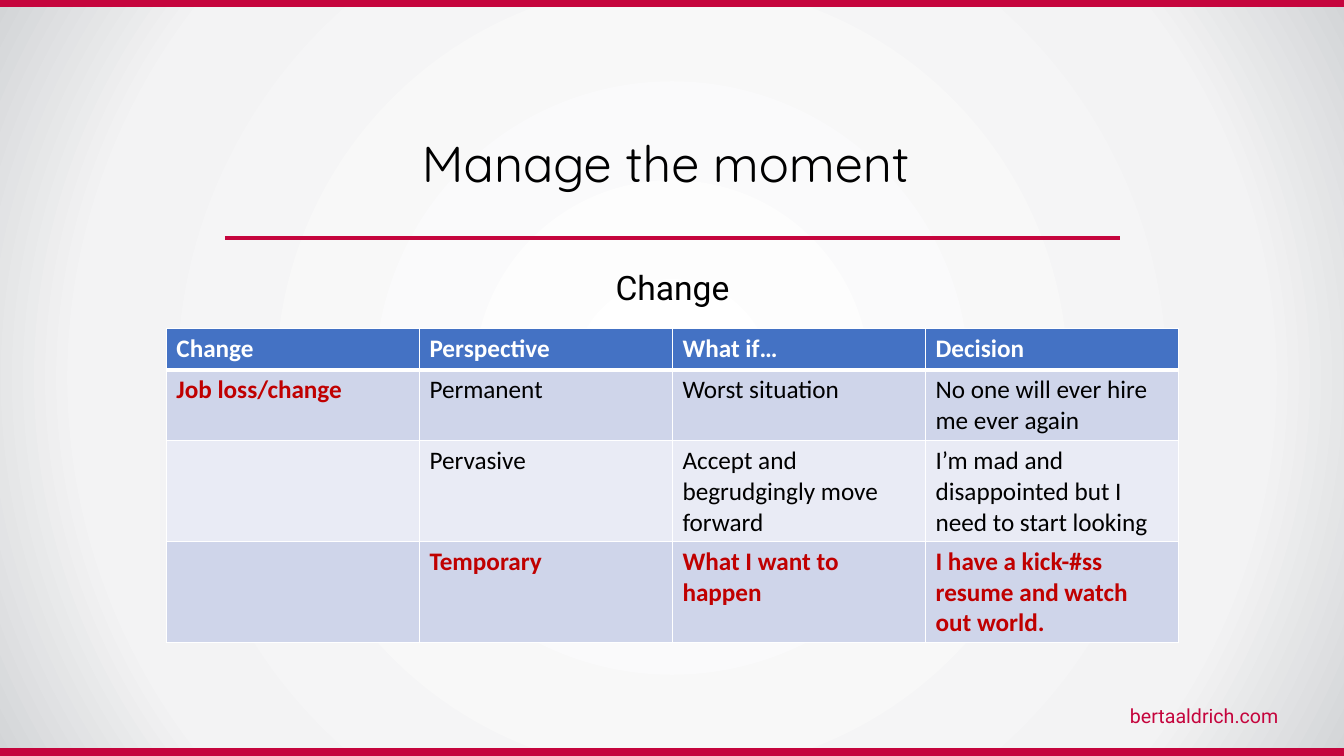
"""Build the "Manage the moment" slide with its table of perspectives on change."""
from typing import NamedTuple

from lxml import etree
from pptx import Presentation
from pptx.dml.color import RGBColor
from pptx.enum.shapes import MSO_CONNECTOR, MSO_SHAPE
from pptx.enum.text import MSO_ANCHOR, MSO_AUTO_SIZE, PP_ALIGN
from pptx.oxml import parse_xml
from pptx.oxml.ns import nsdecls, qn
from pptx.util import Inches, Pt

RECTANGLE = MSO_SHAPE.RECTANGLE
STRAIGHT = MSO_CONNECTOR.STRAIGHT
LEFT, CENTER, RIGHT = PP_ALIGN.LEFT, PP_ALIGN.CENTER, PP_ALIGN.RIGHT
TOP, MIDDLE = MSO_ANCHOR.TOP, MSO_ANCHOR.MIDDLE
NO_AUTOFIT = MSO_AUTO_SIZE.NONE

CRIMSON = RGBColor(0xC5, 0x05, 0x3D)
RED = RGBColor(0xC0, 0x00, 0x00)
BLACK = RGBColor(0x00, 0x00, 0x00)
WHITE = RGBColor(0xFF, 0xFF, 0xFF)
SILVER = RGBColor(0xF3, 0xF3, 0xF4)
GREY = RGBColor(0xD3, 0xD5, 0xD7)
BLUE = RGBColor(0x44, 0x72, 0xC4)
BAND_DARK = RGBColor(0xCF, 0xD5, 0xEA)
BAND_LIGHT = RGBColor(0xE9, 0xEB, 0xF5)


class Box(NamedTuple):
    left: float
    top: float
    width: float
    height: float


class Row(NamedTuple):
    height: float
    fill: RGBColor
    texts: tuple[str, ...]
    highlights: tuple[int, ...] = ()


TITLE_BOX = Box(2.23, 1.35, 8.88, 0.59)
BODY_BOX = Box(0.92, 2.64, 11.5, 3.13)
SITE_BOX = Box(9.5, 6.93, 3.28, 0.34)
BARS = (Box(0, 7.43, 13.33, 0.07), Box(0, -0.01, 13.33, 0.07))
TABLE_LEFT, TABLE_TOP, COLUMN_WIDTH = 1.65, 3.26, 2.51
RULE_Y = 2.36
ROWS = (
    Row(0.41, BLUE, ("Change", "Perspective", "What if…", "Decision")),
    Row(0.7, BAND_DARK, ("Job loss/change", "Permanent", "Worst situation",
                         "No one will ever hire me ever again"), (0,)),
    Row(1, BAND_LIGHT, ("", "Pervasive", "Accept and begrudgingly move forward",
                        "I’m mad and disappointed but I need to start looking")),
    Row(1, BAND_DARK, ("", "Temporary", "What I want to happen",
                       "I have a kick-#ss resume and watch out world."), (1, 2, 3)),
)


def inches(box: Box) -> list[int]:
    return [Inches(v) for v in box]


def write(tf, text: str, *, font: str, size: float, color: RGBColor,
          bold: bool = False, align=LEFT, anchor=TOP, spacing: float = 1) -> None:
    tf.word_wrap = True
    tf.vertical_anchor = anchor
    p = tf.paragraphs[0]
    p.alignment, p.line_spacing, p.space_before = align, spacing, Pt(0)
    r = p.add_run()
    r.text = text
    r.font.name, r.font.size, r.font.bold = font, Pt(size), bold
    r.font.color.rgb = color


def fill_placeholder(sp, box: Box, text: str, font: str, size: float, anchor) -> None:
    sp.left, sp.top, sp.width, sp.height = inches(box)
    tf = sp.text_frame
    tf.auto_size = NO_AUTOFIT
    pPr = tf.paragraphs[0]._p.get_or_add_pPr()
    pPr.set("marL", "0")
    pPr.set("indent", "0")
    etree.SubElement(pPr, qn("a:buNone"))
    write(tf, text, font=font, size=size, color=BLACK, align=CENTER,
          anchor=anchor, spacing=0.9)


def set_background(s) -> None:
    s.background.fill.gradient()
    old = s.element.xpath(".//p:bgPr/a:gradFill")[0]
    stops = "".join(f'<a:gs pos="{pos * 1000}"><a:srgbClr val="{color}"/></a:gs>'
                    for pos, color in ((0, WHITE), (77, SILVER), (100, GREY)))
    old.getparent().replace(old, parse_xml(
        f'<a:gradFill {nsdecls("a")} rotWithShape="1"><a:gsLst>{stops}</a:gsLst>'
        '<a:path path="circle"><a:fillToRect l="50000" t="50000" r="50000" b="50000"/>'
        '</a:path></a:gradFill>'))


def add_bar(s, box: Box) -> None:
    sp = s.shapes.add_shape(RECTANGLE, *inches(box))
    sp.shadow.inherit = False
    sp.fill.solid()
    sp.fill.fore_color.rgb = CRIMSON
    sp.line.color.rgb = CRIMSON
    sp.line.width = Pt(1)


def add_rule(s) -> None:
    y = Inches(RULE_Y)
    line = s.shapes.add_connector(
        STRAIGHT, Inches(TITLE_BOX.left), y, Inches(TITLE_BOX.left + TITLE_BOX.width), y)
    line.line.color.rgb = CRIMSON
    line.line.width = Pt(3)
    etree.SubElement(line._element.spPr, qn("a:effectLst"))


def set_borders(cell, top: float, bottom: float) -> None:
    tcPr = cell._tc.get_or_add_tcPr()
    for side, width in (("L", 1), ("R", 1), ("T", top), ("B", bottom)):
        tcPr.append(parse_xml(
            f'<a:ln{side} {nsdecls("a")} w="{Pt(width)}"><a:solidFill>'
            f'<a:srgbClr val="{WHITE}"/></a:solidFill></a:ln{side}>'))


def add_table(s) -> None:
    columns = len(ROWS[0].texts)
    table = s.shapes.add_table(
        len(ROWS), columns, Inches(TABLE_LEFT), Inches(TABLE_TOP),
        Inches(COLUMN_WIDTH * columns), Inches(sum(row.height for row in ROWS))).table
    for column in table.columns:
        column.width = Inches(COLUMN_WIDTH)
    for i, row in enumerate(ROWS):
        table.rows[i].height = Inches(row.height)
        for j, text in enumerate(row.texts):
            cell = table.cell(i, j)
            set_borders(cell, top=3 if i == 1 else 1, bottom=3 if i == 0 else 1)
            cell.fill.solid()
            cell.fill.fore_color.rgb = row.fill
            if text:
                marked = j in row.highlights
                color = WHITE if i == 0 else RED if marked else BLACK
                write(cell.text_frame, text, font="Calibri", size=18,
                      color=color, bold=i == 0 or marked)


def main() -> None:
    prs = Presentation()
    prs.slide_width, prs.slide_height = Inches(13.33), Inches(7.5)
    s = prs.slides.add_slide(prs.slide_layouts[1])
    set_background(s)
    for bar in BARS:
        add_bar(s, bar)
    site = s.shapes.add_textbox(*inches(SITE_BOX))
    write(site.text_frame, "bertaaldrich.com", font="Roboto", size=14,
          color=CRIMSON, align=RIGHT)
    fill_placeholder(s.shapes.title, TITLE_BOX, "Manage the moment ", "Quicksand", 36, MIDDLE)
    fill_placeholder(s.placeholders[1], BODY_BOX, "Change", "Roboto", 24, TOP)
    add_rule(s)
    add_table(s)
    prs.save("out.pptx")


if __name__ == "__main__":
    main()
